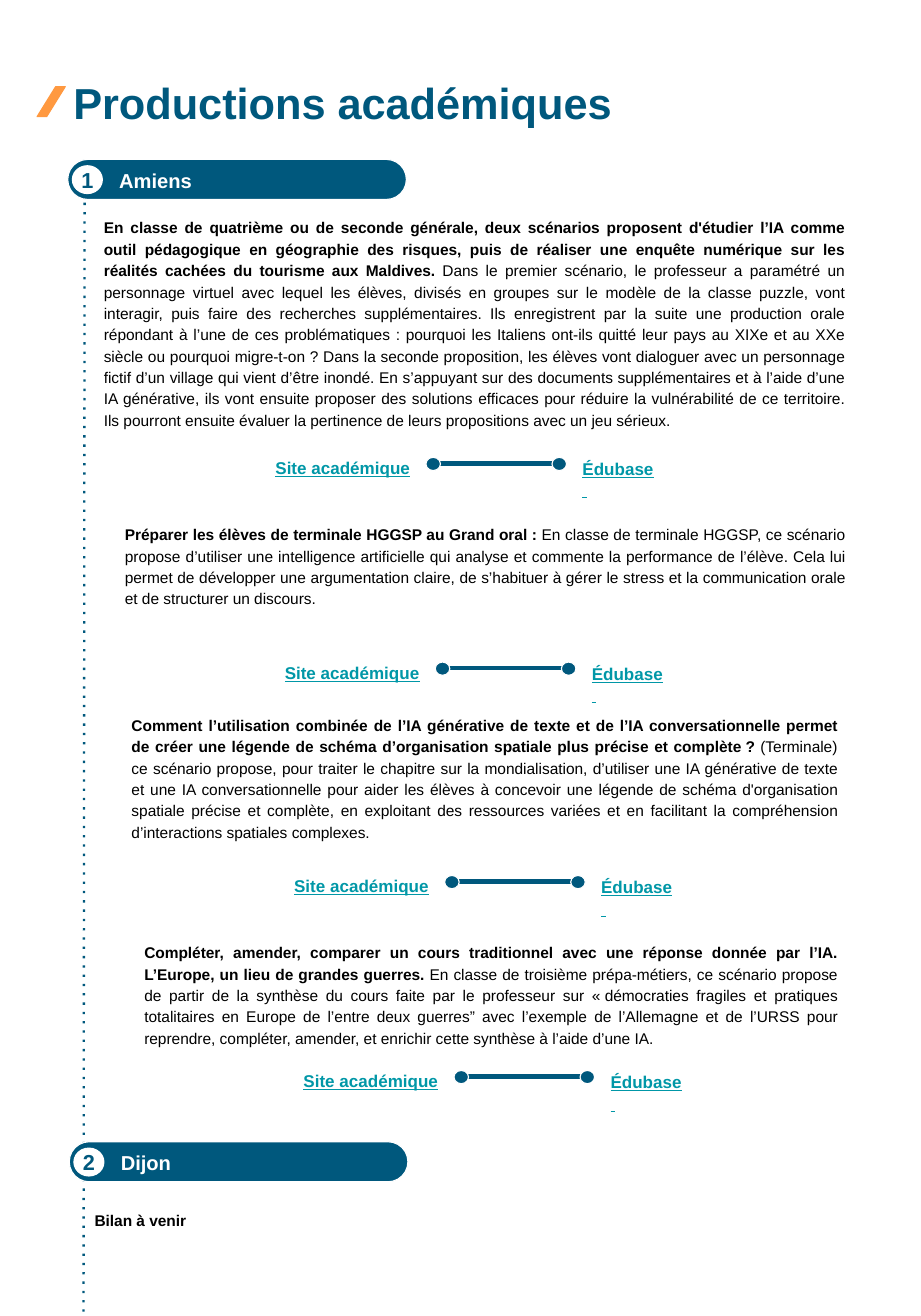
from pptx import Presentation, util as u
from pptx.dml.color import RGBColor
from pptx.enum import dml, shapes, text
from pptx.oxml.ns import qn
from lxml import etree

Pt = u.Pt
THEME = {
    "font": "Arial",
    "navy": RGBColor.from_string("00587D"),
    "orange": RGBColor.from_string("FF9940"),
    "teal": RGBColor.from_string("0097A7"),
    "black": RGBColor.from_string("000000"),
    "white": RGBColor.from_string("FFFFFF"),
    "title": 28, "badge": 14, "heading": 13, "link": 11, "body": 10,
}
FORMS = shapes.MSO_SHAPE
ALIGN = text.PP_ALIGN
NBSP = chr(160)

deck = Presentation()
deck.slide_width, deck.slide_height = Pt(595.28), Pt(850.39)
page = deck.slides.add_slide(deck.slide_layouts[6])


def add_text(at, spans, size, color, align=ALIGN.LEFT, spacing=None, pad=7.2):
    """Text box with one paragraph; the first span is bold, the others are not."""
    box = page.shapes.add_textbox(*map(Pt, at))
    frame = box.text_frame
    frame.word_wrap = True
    frame.margin_left = frame.margin_right = Pt(7.2)
    frame.margin_top = frame.margin_bottom = Pt(pad)
    para = frame.paragraphs[0]
    para.alignment = align
    if spacing:
        para.line_spacing = spacing
    para.font.name = THEME["font"]
    para.font.size = Pt(THEME[size])
    para.font.color.rgb = THEME[color]
    for index, words in enumerate(spans):
        span = para.add_run()
        span.text = words
        span.font.bold = index == 0
    return para


def add_form(form, at, fill, outline):
    shape = page.shapes.add_shape(form, *map(Pt, at))
    shape.shadow.inherit = False
    shape.fill.solid()
    shape.fill.fore_color.rgb = THEME[fill]
    shape.line.color.rgb = THEME[outline]
    shape.line.width = Pt(0.75)
    return shape


# Lines: dotted timeline, then the bar of each link row
LINK_ROWS = [(144 + 6.05 * row, top)
             for row, top in enumerate([289.2, 421.5, 559.4, 685.4])]
lines = [(54.7, 131, 54, 850, 1.5)]
lines += [(left + 133.2, top + 10.2, left + 220.3, top + 10.2, 3)
          for left, top in LINK_ROWS]
for *ends, width in lines:
    line = page.shapes.add_connector(shapes.MSO_CONNECTOR.STRAIGHT, *map(Pt, ends))
    line.line.color.rgb = THEME["navy"]
    line.line.width = Pt(width)
    if width == 1.5:
        line.line.dash_style = dml.MSO_LINE.ROUND_DOT
        line.line._ln.find(qn("a:prstDash")).set("val", "dot")
    etree.SubElement(line._element.spPr, qn("a:effectLst"))

# Title
add_text((40.3, 41.8, 520.6, 48.2), ["Productions académiques"], "title", "navy")
slash = add_form(FORMS.PARALLELOGRAM, (24, 56, 18.2, 19.4), "orange", "orange")
slash.adjustments[0] = 0.66

# Section headings
for number, city, left, top in [("1", "Amiens", 43.8, 103), ("2", "Dijon", 44.8, 737.8)]:
    pill = add_form(FORMS.ROUNDED_RECTANGLE, (left, top, 218.9, 25.9), "navy", "white")
    pill.adjustments[0] = 0.5
    add_text((left + 26.2, top + 2, 212.4, 23), [city], "heading", "white", pad=3.6)
    add_form(FORMS.OVAL, (left + 3, top + 4.1, 19.4, 18), "white", "white")
    add_text((left - 2.4, top - 2.4, 30.2, 31.7), [number], "badge", "navy", ALIGN.CENTER)

# Scenario descriptions
SCENARIOS = [
    ((60, 132.2, 492.8, 94.3), [
        "En classe de quatrième ou de seconde générale, deux scénarios proposent "
        "d'étudier l’IA comme outil pédagogique en géographie des risques, puis de "
        "réaliser une enquête numérique sur les réalités cachées du tourisme aux "
        "Maldives. ",
        "Dans le premier scénario, le professeur a paramétré un personnage virtuel "
        "avec lequel les élèves, divisés en groupes sur le modèle de la classe puzzle, "
        "vont interagir, puis faire des recherches supplémentaires. Ils enregistrent "
        "par la suite une production orale répondant à l’une de ces problématiques : "
        "pourquoi les Italiens ont-ils quitté leur pays au XIXe et au XXe siècle ou "
        "pourquoi migre-t-on ? Dans la seconde proposition, les élèves vont dialoguer "
        "avec un personnage fictif d’un village qui vient d’être inondé. En s’appuyant "
        "sur des documents supplémentaires et à l’aide d’une IA générative, ils vont "
        "ensuite proposer des solutions efficaces pour réduire la vulnérabilité de ce "
        "territoire. Ils pourront ensuite évaluer la pertinence de leurs propositions "
        "avec un jeu sérieux."]),
    ((73.6, 330.5, 479.6, 80.6), [
        "Préparer les élèves de terminale HGGSP au Grand oral : ",
        "En classe de terminale HGGSP, ce scénario propose d’utiliser une intelligence "
        "artificielle qui analyse et commente la performance de l’élève. Cela lui "
        "permet de développer une argumentation claire, de s’habituer à gérer le "
        "stress et la communication orale et de structurer un discours."]),
    ((77.9, 453.6, 470.4, 105.1), [
        "Comment l’utilisation combinée de l’IA générative de texte et de l’IA "
        "conversationnelle permet de créer une légende de schéma d’organisation "
        f"spatiale plus précise et complète{NBSP}? ",
        "(Terminale) ce scénario propose, pour traiter le chapitre sur la "
        "mondialisation, d’utiliser une IA générative de texte et une IA "
        "conversationnelle pour aider les élèves à concevoir une légende de schéma "
        "d'organisation spatiale précise et complète, en exploitant des ressources "
        "variées et en facilitant la compréhension d’interactions spatiales complexes."]),
    ((86.2, 600.5, 462.1, 68.4), [
        "Compléter, amender, comparer un cours traditionnel avec une réponse donnée "
        "par l’IA. L’Europe, un lieu de grandes guerres.",
        " En classe de troisième prépa-métiers, ce scénario propose de partir de la "
        f"synthèse du cours faite par le professeur sur «{NBSP}démocraties fragiles et "
        "pratiques totalitaires en Europe de l’entre deux guerres” avec l’exemple de "
        "l’Allemagne et de l’URSS pour reprendre, compléter, amender, et enrichir "
        "cette synthèse à l’aide d’une IA."]),
    ((54, 774, 236.2, 26.6), ["Bilan à venir"]),
]
for at, spans in SCENARIOS:
    add_text(at, spans, "body", "black", ALIGN.JUSTIFY, 1.15)

# Link rows: two underlined labels and the dots at the ends of the bar
for left, top in LINK_ROWS:
    site = add_text((left, top, 128.2, 28.1), ["Site académique"],
                    "link", "teal", ALIGN.RIGHT)
    base = add_text((left + 225.4, top, 105.8, 41), ["Édubase"], "link", "teal")
    base.add_line_break()
    base.add_run().text = " "
    for para in (site, base):
        para.font.underline = True
    for offset in (131.3, 212.8):
        add_form(FORMS.OVAL, (left + offset, top + 6.3, 9.4, 8.6), "navy", "white")

deck.save("out.pptx")
